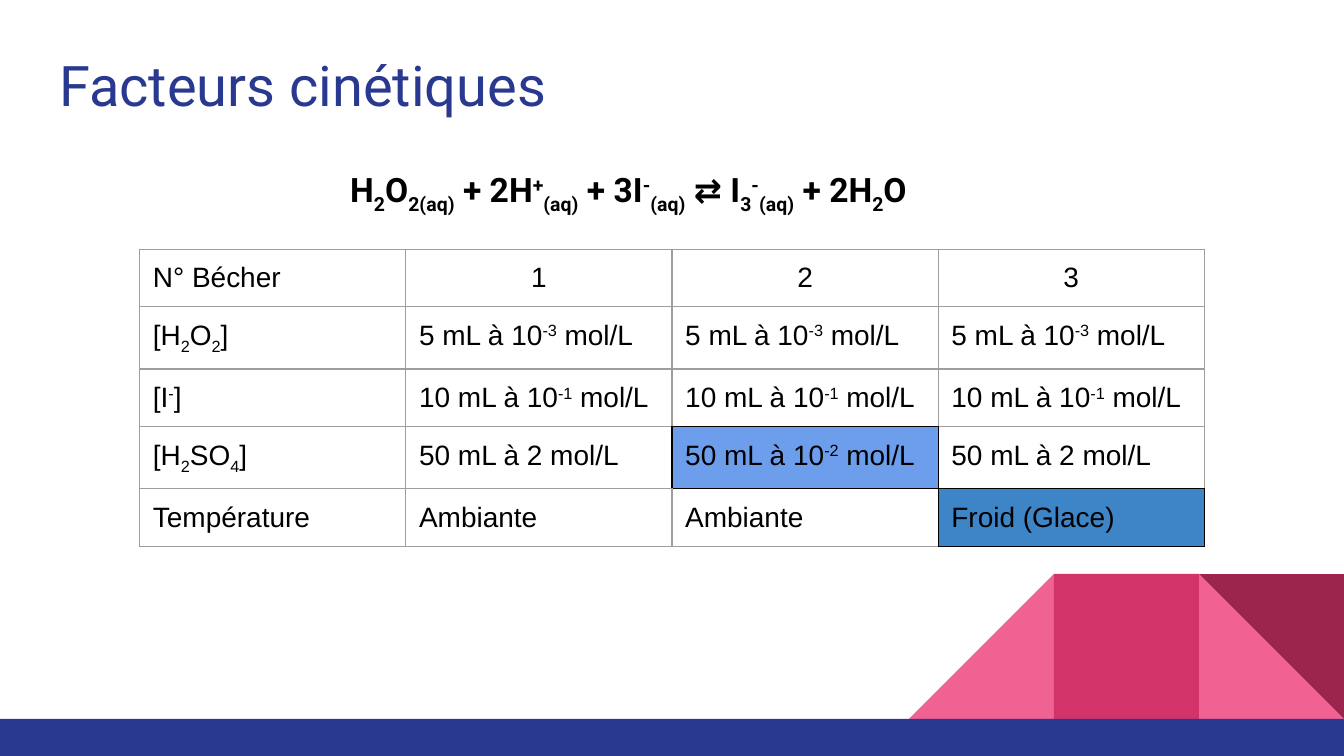
"""Build the slide on kinetic factors, with its reaction equation and beaker table."""
import dataclasses

import lxml.etree
import pptx
import pptx.dml.color
import pptx.enum.shapes
import pptx.enum.text
import pptx.oxml.ns
import pptx.util

Cm = pptx.util.Cm
Shapes = pptx.enum.shapes.MSO_SHAPE
Align = pptx.enum.text.PP_ALIGN


@dataclasses.dataclass(frozen=True)
class Theme:
    heading_font: str = "Roboto"
    body_font: str = "Arial"
    title_size: int = 30
    equation_size: int = 18
    table_size: int = 15
    blue: str = "2A3990"
    black: str = "000000"
    pink: str = "F06292"
    rose: str = "D23369"
    plum: str = "9C254D"
    grid: str = "9E9E9E"
    diluted: str = "6D9EEB"
    cold: str = "3D85C6"


theme = Theme()
color = pptx.dml.color.RGBColor.from_string
baselines = {"_": "-25000", "^": "30000"}


def write_text(frame, text, font, size, ink, bold=False, align=Align.LEFT):
    """Write text whose parts, split by |, are lowered by _ or raised by ^."""
    frame.word_wrap = True
    frame.auto_size = pptx.enum.text.MSO_AUTO_SIZE.NONE
    frame.vertical_anchor = pptx.enum.text.MSO_ANCHOR.TOP
    frame.margin_left = frame.margin_right = Cm(0.25)
    frame.margin_top = frame.margin_bottom = Cm(0.25)
    paragraph = frame.paragraphs[0]
    paragraph.alignment = align
    for part in text.split("|"):
        run = paragraph.add_run()
        run.text = part.lstrip("_^")
        run.font.name = font
        run.font.size = pptx.util.Pt(size)
        run.font.bold = bold
        run.font.color.rgb = color(ink)
        if part[0] in baselines:
            run.font._element.set("baseline", baselines[part[0]])


def set_border(cell, side, ink):
    """Draw one side (L, R, T or B) of a cell in a thin solid line."""
    properties = cell._tc.get_or_add_tcPr()
    line = lxml.etree.SubElement(properties, pptx.oxml.ns.qn(f"a:ln{side}"), w=str(pptx.util.Pt(0.75)))
    fill = lxml.etree.SubElement(line, pptx.oxml.ns.qn("a:solidFill"))
    lxml.etree.SubElement(fill, pptx.oxml.ns.qn("a:srgbClr"), val=ink)


presentation = pptx.Presentation()
presentation.slide_width = Cm(25.4)
presentation.slide_height = Cm(14.29)
slide = presentation.slides.add_slide(presentation.slide_layouts[5])

tile = 2.74
tile_top = 10.85
decorations = [
    (Shapes.RIGHT_TRIANGLE, 25.4 - tile, tile_top, tile, tile, 0, theme.pink),
    (Shapes.RIGHT_TRIANGLE, 25.4 - 3 * tile, tile_top, tile, tile, 270, theme.pink),
    (Shapes.RECTANGLE, 25.4 - 2 * tile, tile_top, tile, tile, 0, theme.rose),
    (Shapes.RIGHT_TRIANGLE, 25.4 - tile, tile_top, tile, tile, 180, theme.plum),
    (Shapes.RECTANGLE, 0, tile_top + tile, 25.4, 0.7, 0, theme.blue),
]
for kind, left, top, width, height, rotation, fill in decorations:
    shape = slide.shapes.add_shape(kind, Cm(left), Cm(top), Cm(width), Cm(height))
    shape.rotation = rotation
    shape.shadow.inherit = False
    shape.fill.solid()
    shape.fill.fore_color.rgb = color(fill)
    shape.line.fill.background()

title = slide.shapes.title
title.left, title.top, title.width, title.height = Cm(0.87), Cm(0.71), Cm(23.67), Cm(1.68)
write_text(title.text_frame, "Facteurs cinétiques", font=theme.heading_font,
           size=theme.title_size, ink=theme.blue)

equation = slide.shapes.add_textbox(Cm(6.37), Cm(2.95), Cm(13.9), Cm(0.97))
write_text(equation.text_frame,
           "H|_2|O|_2(aq)| + 2H|^+|_(aq)| + 3I|^-|_(aq)| ⇄ I|_3|^-|_(aq)| + 2H|_2|O",
           font=theme.heading_font, size=theme.equation_size, ink=theme.black, bold=True)

peroxide = "5 mL à 10|^-3| mol/L"
iodide = "10 mL à 10|^-1| mol/L"
acid = "50 mL à 2 mol/L"
beakers = [
    ["N° Bécher", "1", "2", "3"],
    ["[H|_2|O|_2|]"] + [peroxide] * 3,
    ["[I|^-|]"] + [iodide] * 3,
    ["[H|_2|SO|_4|]", acid, "50 mL à 10|^-2| mol/L", acid],
    ["Température", "Ambiante", "Ambiante", "Froid (Glace)"],
]
highlights = {(3, 2): theme.diluted, (4, 3): theme.cold}
neighbours = {"L": (0, -1), "R": (0, 1), "T": (-1, 0), "B": (1, 0)}

row_height = 1.08
column_width = 5.03
table = slide.shapes.add_table(len(beakers), 4, Cm(2.64), Cm(4.71),
                               Cm(4 * column_width), Cm(len(beakers) * row_height)).table
table.first_row = False
table.horz_banding = False
for column in table.columns:
    column.width = Cm(column_width)
for row_index, row in enumerate(beakers):
    table.rows[row_index].height = Cm(row_height)
    for column_index, text in enumerate(row):
        cell = table.cell(row_index, column_index)
        position = (row_index, column_index)
        centred = row_index == 0 and column_index > 0
        write_text(cell.text_frame, text, font=theme.body_font, size=theme.table_size,
                   ink=theme.black, align=Align.CENTER if centred else Align.LEFT)
        cell.margin_left = cell.margin_right = cell.margin_top = cell.margin_bottom = Cm(0.25)
        for side, (down, across) in neighbours.items():
            beside = (row_index + down, column_index + across)
            dark = position in highlights or beside in highlights
            set_border(cell, side, theme.black if dark else theme.grid)
        if position in highlights:
            cell.fill.solid()
            cell.fill.fore_color.rgb = color(highlights[position])
        else:
            cell.fill.background()

presentation.save("out.pptx")
